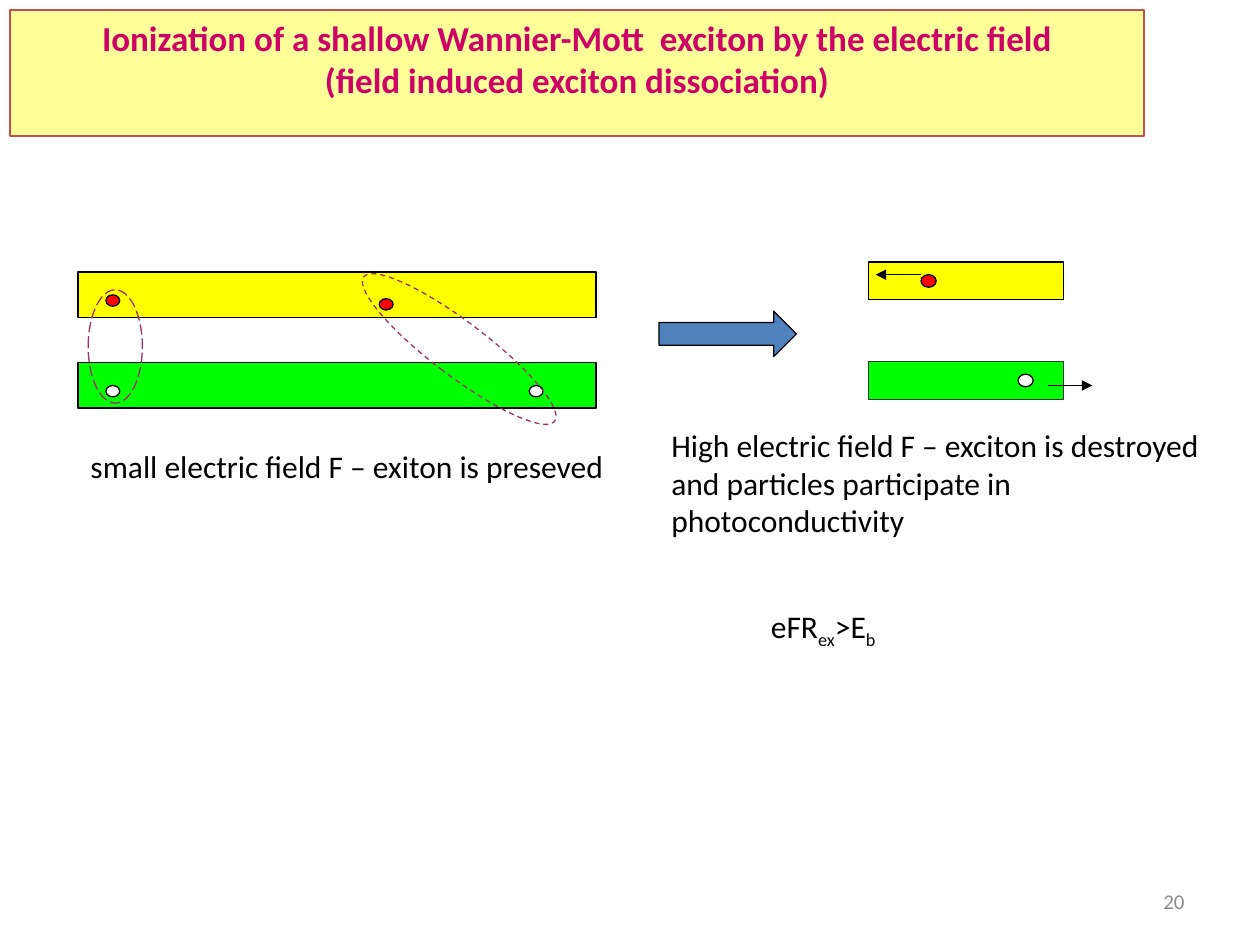
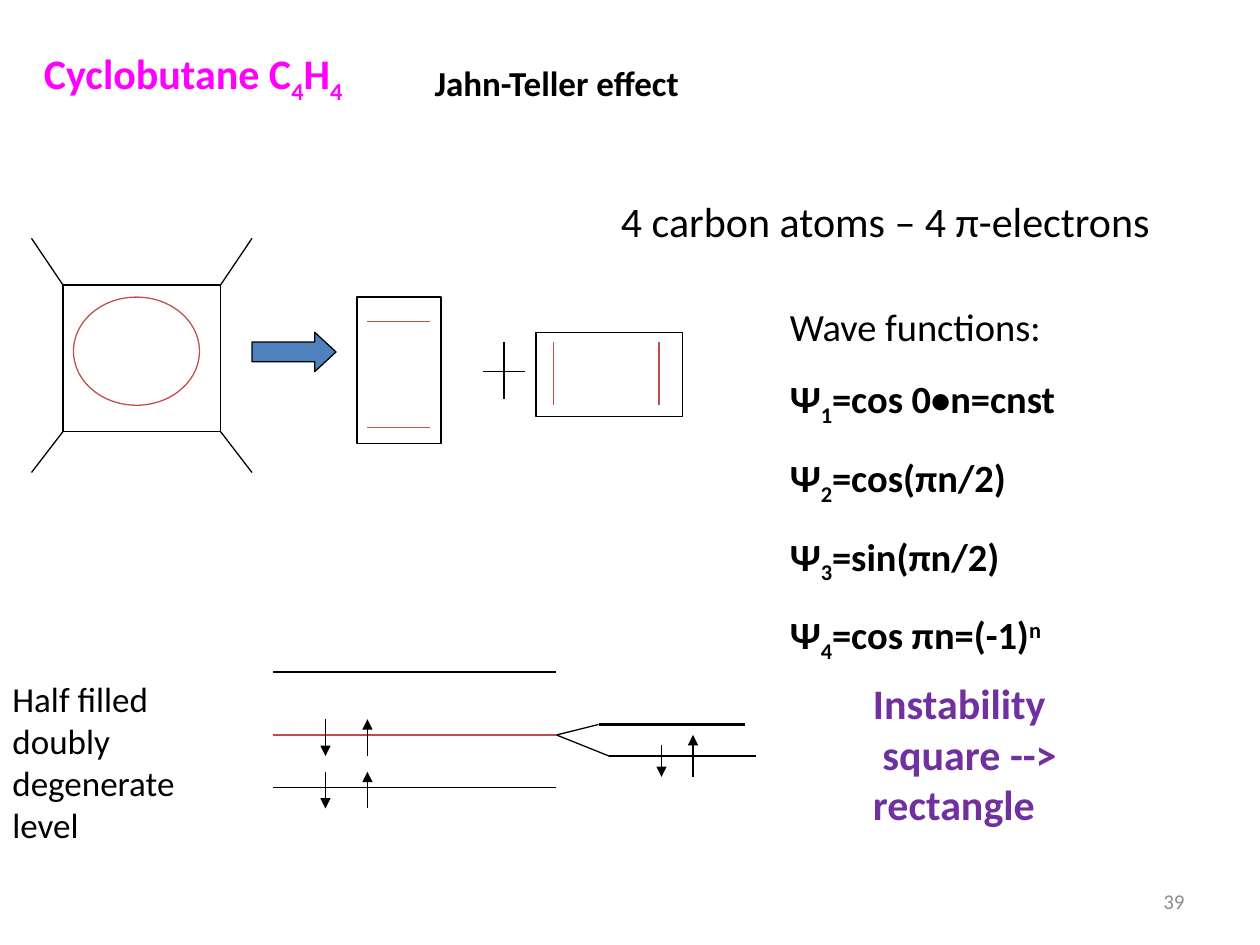
from pptx import Presentation
from pptx.dml.color import RGBColor
from pptx.enum.dml import MSO_LINE as Dash
from pptx.enum.shapes import MSO_CONNECTOR as Conn, MSO_SHAPE as Form
from pptx.enum.text import MSO_ANCHOR as Anchor, MSO_AUTO_SIZE as Fit, PP_ALIGN as Align
from pptx.oxml.ns import qn
from pptx.util import Inches, Pt
from lxml.etree import SubElement

# Shared look
FONT, THIN, THICK = "Calibri", 0.75, 2.25
BLACK, WHITE, GREY, BLUE = "000000", "FFFFFF", "8C8C8C", "4F81BD"
YELLOW, GREEN, RED, PLUM = "FFFF00", "00FF00", "FF0000", "993366"
CREAM, ROSE, BRICK = "FFFF99", "CC0066", "C0504D"
PINK, VIOLET = "FF00FF", "7030A0"
PAGE = (7.17, 6.95, 2.33, 0.4)

# Slide 1 content: "|" parts runs, "_" lowers a run, "^" raises it
TITLE = ["Ionization of a shallow Wannier-Mott  exciton by the electric field\v"
         "(field induced exciton dissociation)"]
NOTES = [  # box, text, wrap
    ((0.62, 3.5, 4.36, 0.4), "small electric field F – exiton is preseved", False),
    ((5.23, 3.33, 4.77, 0.71), "High electric field F – exciton is destroyed "
     "and particles participate in photoconductivity", True),
    ((6.02, 4.77, 1.67, 0.51), "eFR|_ex|>E|_b", True),
]
BANDS = [  # left, width, height, top of upper, top of lower, lower edge
    (0.62, 4.11, 0.36, 2.16, 2.88, BLACK),
    (6.89, 1.55, 0.3, 2.08, 2.87, "333333"),
]
DOTS = [  # left, top, width, height, fill
    (0.84, 3.06, 0.11, 0.09, WHITE), (4.2, 3.06, 0.11, 0.09, WHITE),
    (0.84, 2.34, 0.11, 0.09, RED), (3.01, 2.37, 0.11, 0.09, RED),
    (7.31, 2.18, 0.12, 0.1, RED), (8.08, 2.97, 0.12, 0.1, WHITE),
]
PAIRS = [  # box, dash, turn
    ((0.7, 2.3, 0.43, 0.9), Dash.LONG_DASH, 0),
    ((3.43, 1.82, 0.43, 1.9), Dash.DASH, 307.1),
]
DRIFT = [(7.31, 2.18, 6.95, 2.18), (8.32, 3.06, 8.67, 3.06)]

# Slide 2 content
WAVES = ["Wave functions:", "Ψ|_1|=cos 0•n=cnst", "Ψ|_2|=cos(πn/2)",
         "Ψ|_3|=sin(πn/2)", "Ψ|_4|=cos πn=(-1)|^n"]
HEADS = [  # box, text, size, colour, bold
    ((3.35, 0.44, 2.19, 0.44), "Jahn-Teller effect", 20, BLACK, True),
    ((0.25, 0.33, 2.63, 0.5), "Cyclobutane C|_4|H|_4", 24, PINK, True),
    ((4.83, 1.5, 4.43, 0.5), "4 carbon atoms – 4 π-electrons", 24, BLACK, False),
]
HALF = ["Half filled doubly degenerate level"]
END = ["Instability", " square --> rectangle"]

# Slide 2 drawings, in cells of a twelfth of an inch
CELL = 1 / 12
RING = (6, 27.15, 15, 13.95)                  # square molecule
TALL, WIDE = (34, 28.3, 8, 13.95), (51.05, 31.65, 13.95, 8)
BONDS = [(35, y, 41, y) for y in (30.6, 40.7)] + [
    (x, 38.6, x, 32.6) for x in (62.75, 52.7)]
PLUS = [(46, 35.4, 50, 35.4), (48, 32.6, 48, 38)]
LEVELS = [(64, BLACK), (70, "BF4C48"), (75, BLACK)]
FORK = [(53, 57, 69, 71, THICK), (53, 58, 72, 72, THIN)]
SPINS = [  # column, from row, to row
    (31, 68.5, 72), (35, 72, 68.5), (63, 71, 74),
    (66, 74, 70), (31, 73.5, 77), (35, 77, 73.5),
]


def rgb(hue):
    return RGBColor.from_string(hue)


def cells(*spans):
    return [n * CELL for n in spans]


def shape(page, form, box, fill=None, edge=BLACK, dash=None, turn=0):
    item = page.shapes.add_shape(form, *map(Inches, box))
    item.shadow.inherit = False
    item.rotation = turn
    if fill:
        item.fill.solid()
        item.fill.fore_color.rgb = rgb(fill)
    else:
        item.fill.background()
    item.line.color.rgb = rgb(edge)
    item.line.width = Pt(THIN)
    if dash:
        item.line.dash_style = dash
    return item


def line(page, ends, hue=BLACK, width=THIN, arrow=False):
    item = page.shapes.add_connector(Conn.STRAIGHT, *map(Inches, ends))
    item.line.color.rgb = rgb(hue)
    item.line.width = Pt(width)
    if arrow:
        SubElement(item.line._get_or_add_ln(), qn("a:tailEnd"), type="triangle")
    SubElement(item._element.spPr, qn("a:effectLst"))


def write(frame, paras, size, hue=BLACK, bold=False, align=Align.LEFT, gap=None):
    for i, text in enumerate(paras):
        para = frame.paragraphs[0] if i == 0 else frame.add_paragraph()
        para.alignment = align
        if gap:
            para.line_spacing = gap
        for part in text.split("|"):
            shift = {"_": "-25000", "^": "30000"}.get(part[0])
            for j, piece in enumerate((part[1:] if shift else part).split("\v")):
                if j:
                    para.add_line_break()
                run = para.add_run()
                run.text = piece
                font = run.font
                font.name, font.size, font.bold = FONT, Pt(size), bold
                font.color.rgb = rgb(hue)
                if shift:
                    font._element.set("baseline", shift)


def label(page, box, paras, size, hue=BLACK, wrap=True, **style):
    frame = page.shapes.add_textbox(*map(Inches, box)).text_frame
    frame.word_wrap = wrap
    frame.auto_size = Fit.SHAPE_TO_FIT_TEXT
    write(frame, paras, size, hue, **style)
    return frame


def start(deck, number):
    page = deck.slides.add_slide(deck.slide_layouts[6])
    frame = label(page, PAGE, [number], 12, GREY, align=Align.RIGHT)
    frame.auto_size = Fit.NONE
    frame.vertical_anchor = Anchor.MIDDLE
    return page


def exciton(deck):
    page = start(deck, "20")
    # Bands with electrons and holes
    for left, width, height, top, low, edge in BANDS:
        shape(page, Form.RECTANGLE, (left, top, width, height), YELLOW)
        shape(page, Form.RECTANGLE, (left, low, width, height), GREEN, edge)
    for *box, fill in DOTS:
        shape(page, Form.OVAL, box, fill)
    for box, dash, turn in PAIRS:
        shape(page, Form.OVAL, box, None, PLUM, dash, turn)
    for ends in DRIFT:
        line(page, ends, arrow=True)
    shape(page, Form.RIGHT_ARROW, (5.23, 2.47, 1.09, 0.36), BLUE)
    # Captions and title
    for box, text, wrap in NOTES:
        label(page, box, [text], 18, wrap=wrap)
    frame = shape(page, Form.RECTANGLE, (0.08, 0.08, 9, 1), CREAM, BRICK).text_frame
    frame.word_wrap = True
    frame.vertical_anchor = Anchor.TOP
    write(frame, TITLE, 20, ROSE, True, Align.CENTER)


def ring(deck):
    page = start(deck, "39")
    # Square molecule with its four outer bonds
    left, top, width, height = RING
    shape(page, Form.RECTANGLE, cells(*RING))
    for x, out in ((left, -3), (left + width, 3)):
        for y, far in ((top, 22.7), (top + height, 45)):
            line(page, cells(x + out, far, x, y))
    shape(page, Form.OVAL, cells(7, 28.3, 12, 10.3), None, BRICK)
    arrow = shape(page, Form.RIGHT_ARROW, cells(24, 31.65, 8, 3.75), BLUE)
    arrow.adjustments[1] = 0.54
    # Two rectangular forms
    for box in (TALL, WIDE):
        shape(page, Form.RECTANGLE, cells(*box))
    for ends in BONDS:
        line(page, cells(*ends), BRICK)
    for ends in PLUS:
        line(page, cells(*ends))
    # Energy levels, their split and the spins
    for y, hue in LEVELS:
        line(page, cells(26, y, 53, y), hue)
    for x, bend, y, stop, width in FORK:
        line(page, cells(x, 70, bend, y))
        line(page, cells(bend, y, stop, y), width=width)
    for x, tail, tip in SPINS:
        line(page, cells(x, tail, x, tip), arrow=True)
    # Text
    for box, text, size, hue, bold in HEADS:
        label(page, box, [text], size, hue, False, bold=bold)
    frame = label(page, (6.17, 2.17, 2.33, 2.88), WAVES, 22, bold=True, gap=1.5)
    frame.paragraphs[0].runs[0].font.bold = False
    label(page, (0, 5.33, 1.92, 1.45), HALF, 20)
    label(page, (6.83, 5.33, 2.67, 1.31), END, 24, VIOLET, bold=True)


def main():
    deck = Presentation()
    deck.slide_width, deck.slide_height = Inches(10), Inches(7.5)
    exciton(deck)
    ring(deck)
    deck.save("out.pptx")


if __name__ == "__main__":
    main()
